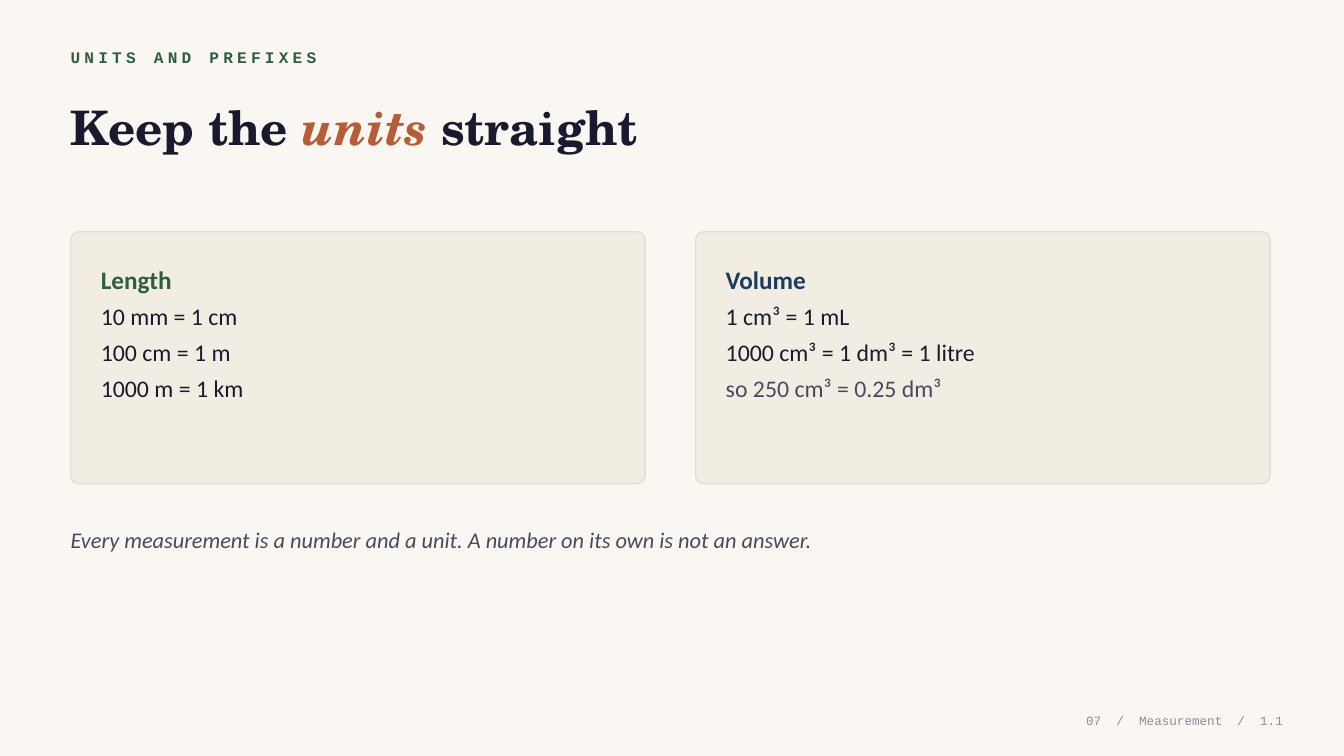
from pptx import Presentation
from pptx.dml.color import RGBColor
from pptx.enum.shapes import MSO_SHAPE as Shape
from pptx.enum.text import MSO_ANCHOR as Anchor, PP_ALIGN as Align
from pptx.util import Cm, Pt

# Colours and fonts
PAPER = RGBColor(0xFA, 0xF7, 0xF2)
CARD = RGBColor(0xF2, 0xED, 0xE3)
BORDER = RGBColor(0xE5, 0xDD, 0xD0)
INK = RGBColor(0x1A, 0x1A, 0x2E)
SLATE = RGBColor(0x4A, 0x4A, 0x5E)
GREY = RGBColor(0x8B, 0x8B, 0x9C)
GREEN = RGBColor(0x2D, 0x5F, 0x3F)
NAVY = RGBColor(0x1E, 0x3A, 0x5F)
RUST = RGBColor(0xB8, 0x5C, 0x38)
SERIF, SANS, MONO = "TeX Gyre Schola", "Calibri", "Courier New"

# Content
EYEBROW = "UNITS AND PREFIXES"
TITLE = [("Keep the ", INK, False), ("units", RUST, True), (" straight", INK, False)]
CARDS = [
    ("Length", GREEN, [("10 mm = 1 cm", INK), ("100 cm = 1 m", INK),
                       ("1000 m = 1 km", INK)]),
    ("Volume", NAVY, [("1 cm³ = 1 mL", INK), ("1000 cm³ = 1 dm³ = 1 litre", INK),
                      ("so 250 cm³ = 0.25 dm³", SLATE)]),
]
TAKEAWAY = "Every measurement is a number and a unit. A number on its own is not an answer."
FOOTER = ["07", "/", "Measurement", "/", "1.1"]

# Layout in centimetres
LEFT, WIDTH = 1.78, 30.3
CARD_TOP, CARD_WIDTH, CARD_HEIGHT, CARD_GAP = 5.84, 14.48, 6.35, 1.27
PAD_X, PAD_Y = 0.76, 0.64
LINE_SPACING = 1.25
FOOTER_SIZE = 9
WIDE_SPACE = 0.6 * FOOTER_SIZE  # one extra monospaced character

deck = Presentation()
deck.slide_width, deck.slide_height = Cm(33.87), Cm(19.05)
page = deck.slides.add_slide(deck.slide_layouts[6])
page.background.fill.solid()
page.background.fill.fore_color.rgb = PAPER


def add_box(left, top, width, height, anchor=Anchor.MIDDLE):
    frame = page.shapes.add_textbox(Cm(left), Cm(top), Cm(width), Cm(height)).text_frame
    frame.word_wrap = True
    frame.vertical_anchor = anchor
    frame.margin_left = frame.margin_right = frame.margin_top = frame.margin_bottom = 0
    return frame


def add_span(para, text, font, size, color, bold=False, italic=False, tracking=0):
    span = para.add_run()
    span.text = text
    span.font.name, span.font.size = font, Pt(size)
    span.font.bold, span.font.italic = bold, italic
    span.font.color.rgb = color
    if tracking:
        span.font._element.set("spc", str(round(tracking * 100)))


# Heading
eyebrow = add_box(LEFT, 1.07, WIDTH, 0.76).paragraphs[0]
add_span(eyebrow, EYEBROW, MONO, 11.5, GREEN, bold=True, tracking=3)
title = add_box(LEFT, 1.98, WIDTH, 2.41).paragraphs[0]
for text, color, italic in TITLE:
    add_span(title, text, SERIF, 34, color, bold=True, italic=italic)

# Cards
for index, (heading, accent, facts) in enumerate(CARDS):
    left = LEFT + index * (CARD_WIDTH + CARD_GAP)
    card = page.shapes.add_shape(Shape.ROUNDED_RECTANGLE, Cm(left), Cm(CARD_TOP),
                                 Cm(CARD_WIDTH), Cm(CARD_HEIGHT))
    card.adjustments[0] = 0.032
    card.shadow.inherit = False
    card.fill.solid()
    card.fill.fore_color.rgb = CARD
    card.line.color.rgb = BORDER
    card.line.width = Pt(1)

    frame = add_box(left + PAD_X, CARD_TOP + PAD_Y, CARD_WIDTH - 2 * PAD_X, 5.33, Anchor.TOP)
    add_span(frame.paragraphs[0], heading, SANS, 18, accent, bold=True)
    for text, color in facts:
        add_span(frame.add_paragraph(), text, SANS, 17, color)
    for para in frame.paragraphs:
        para.line_spacing = LINE_SPACING

# Takeaway
takeaway = add_box(LEFT, 12.95, WIDTH, 1.27).paragraphs[0]
add_span(takeaway, TAKEAWAY, SANS, 16, SLATE, italic=True)

# Footer
footer = add_box(23.95, 17.78, 8.38, 0.76).paragraphs[0]
footer.alignment = Align.RIGHT
for index, part in enumerate(FOOTER):
    if index:
        add_span(footer, " ", MONO, FOOTER_SIZE, GREY, tracking=WIDE_SPACE)
    add_span(footer, part, MONO, FOOTER_SIZE, GREY)

deck.save("out.pptx")
